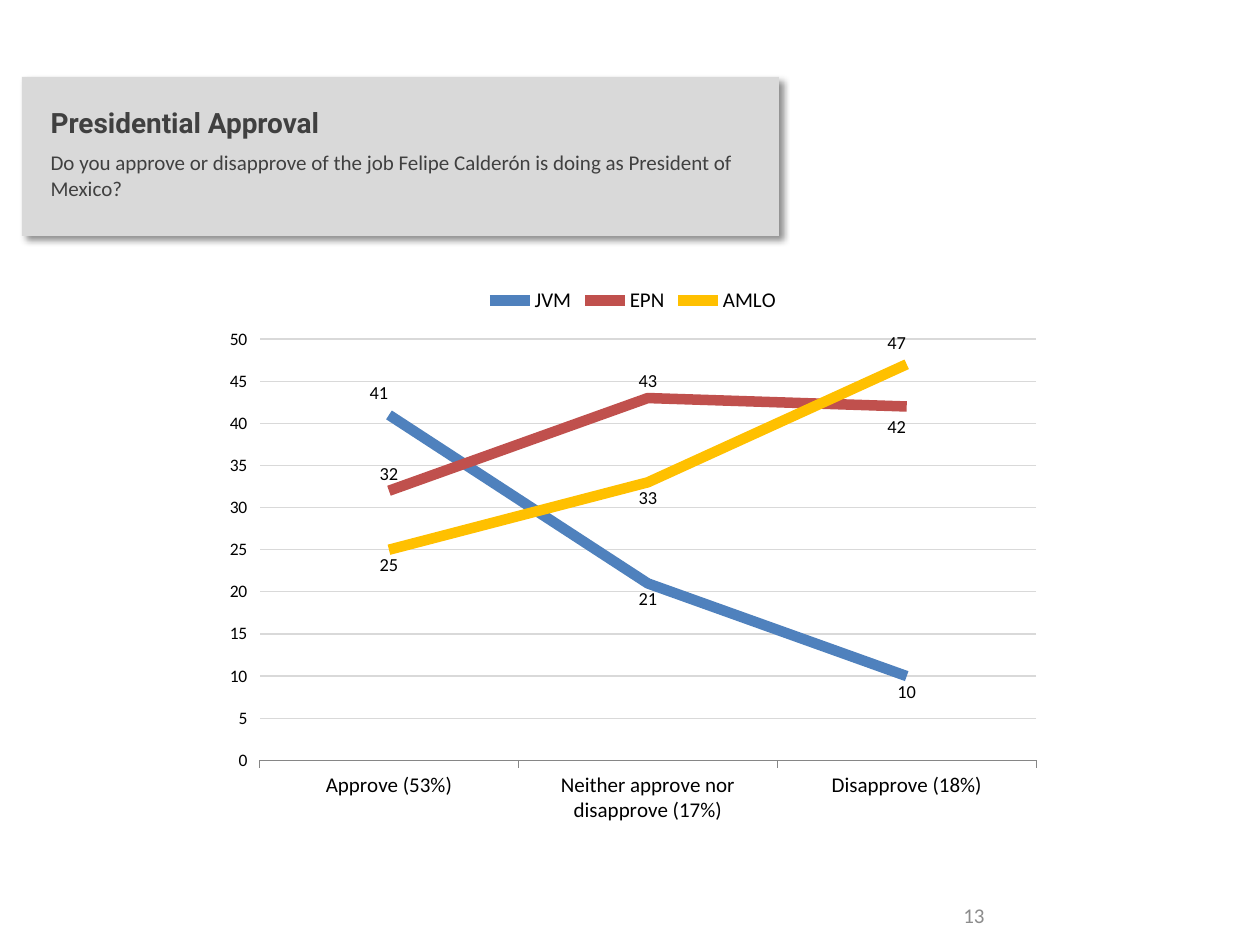
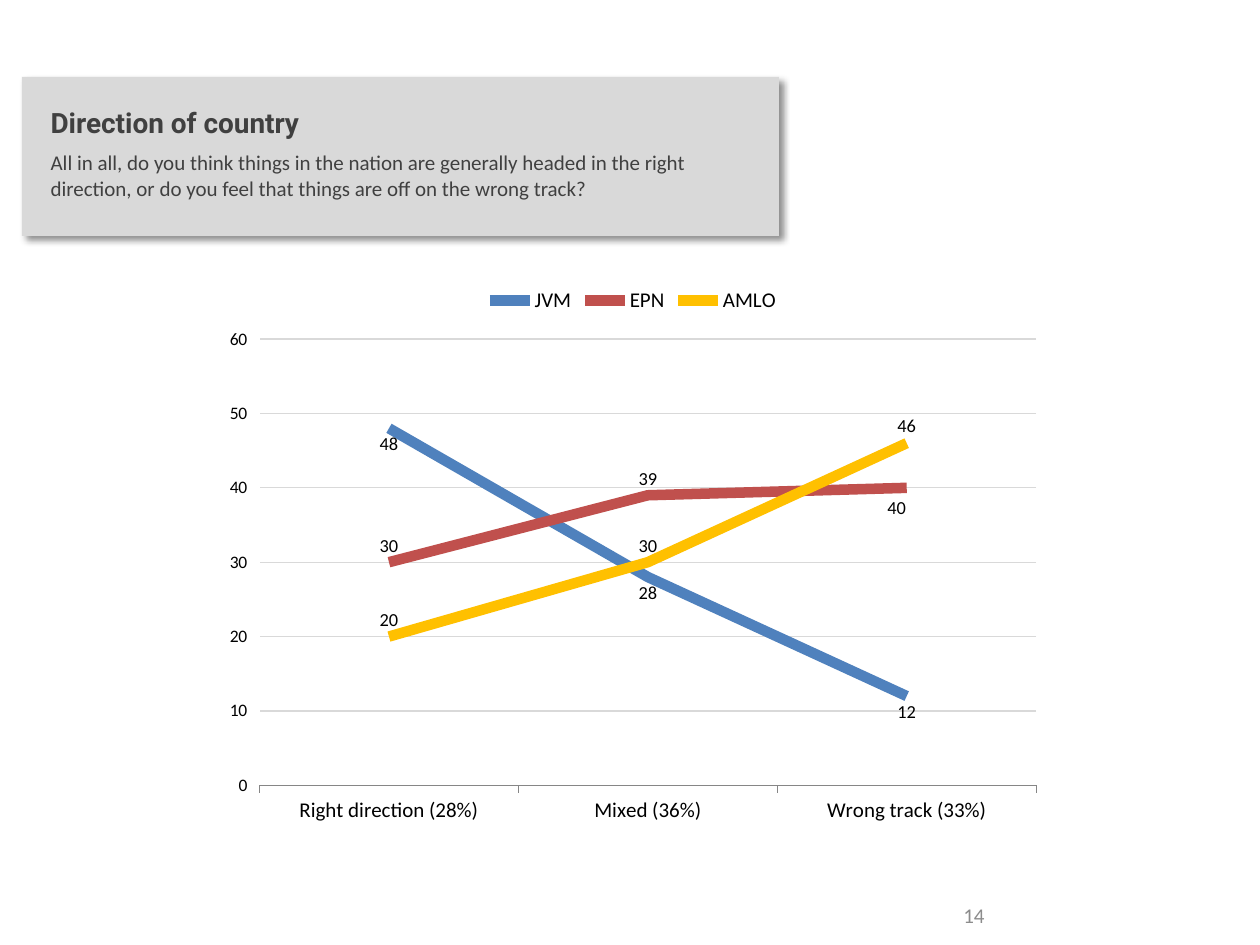
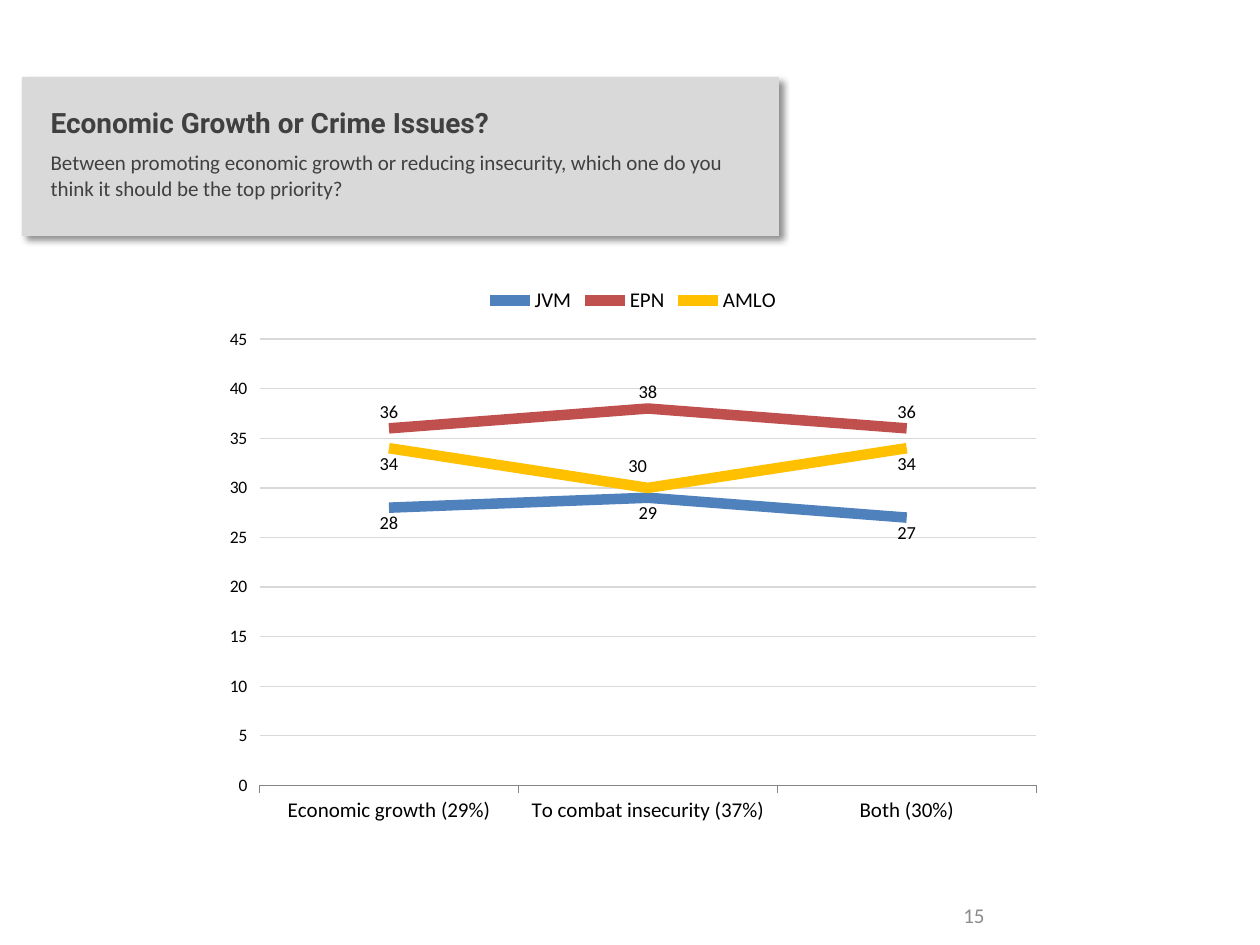
from pptx import Presentation
from pptx.chart.data import CategoryChartData as ChartData
from pptx.dml.color import RGBColor as RGB
from pptx.enum.chart import (XL_CHART_TYPE as Kind, XL_LABEL_POSITION as Spot,
                             XL_LEGEND_POSITION as Side, XL_TICK_MARK as Tick)
from pptx.enum.shapes import MSO_SHAPE as Form
from pptx.enum.text import MSO_ANCHOR as Anchor, MSO_AUTO_SIZE as Fit, PP_ALIGN as Align
from pptx.oxml import parse_xml
from pptx.oxml.ns import nsdecls, qn
from pptx.util import Pt

# Shared look
PX = 914400 / 126
SIZE = (1260, 945)
HEX = {"band": "D9D9D9", "ink": "404040", "page": "8C8C8C", "text": "000000",
       "grid": "D9D9D9", "axis": "868686",
       "JVM": "4F81BD", "EPN": "C0504D", "AMLO": "FFC000"}
BODY, HEAD = "Calibri", "Roboto"
FIRST = 13  # number of the first page

# Boxes: left, top, width, height in px
BAND = (22, 77, 757, 159)
TITLE = (38, 99, 722, 108)
CHART = (213, 274, 840, 560)
PAGE = (926, 890, 96, 50)

# A label that would hit a line flips to the other side and shifts left and outward
ABOVE, BELOW = Spot.ABOVE, Spot.BELOW
FLIP = {ABOVE: BELOW, BELOW: ABOVE}
LEFT, OUT = 10, 5

# Each line: values, label side, points whose label is flipped
POLLS = [
    {"head": "Presidential Approval",
     "ask": "Do you approve or disapprove of the job Felipe Calderón is doing "
            "as President of Mexico?",
     "cats": ["Approve (53%)", "Neither approve nor disapprove (17%)", "Disapprove (18%)"],
     "top": 50, "step": 5,
     "lines": {"JVM": ((41, 21, 10), BELOW, [0]),
               "EPN": ((32, 43, 42), ABOVE, [2]),
               "AMLO": ((25, 33, 47), BELOW, [2])}},
    {"head": "Direction of country",
     "ask": "All in all, do you think things in the nation are generally headed in "
            "the right direction, or do you feel that things are off on the wrong track?",
     "cats": ["Right direction (28%)", "Mixed (36%)", "Wrong track (33%)"],
     "top": 60, "step": 10,
     "lines": {"JVM": ((48, 28, 12), BELOW, []),
               "EPN": ((30, 39, 40), ABOVE, [2]),
               "AMLO": ((20, 30, 46), ABOVE, [])}},
    {"head": "Economic Growth or Crime Issues?",
     "ask": "Between promoting economic growth or reducing insecurity, which one "
            "do you think it should be the top priority?",
     "cats": ["Economic growth (29%)", "To combat insecurity (37%)", "Both (30%)"],
     "top": 45, "step": 5,
     "lines": {"JVM": ((28, 29, 27), BELOW, []),
               "EPN": ((36, 38, 36), ABOVE, []),
               "AMLO": ((34, 30, 34), BELOW, [1])}},
]


# Helpers
def emu(box):
    return [round(n * PX) for n in box]


def tint(name):
    return RGB.from_string(HEX[name])


def style(font, size, color="text", face=BODY, bold=False):
    font.size, font.name, font.bold = Pt(size), face, bold
    font.color.rgb = tint(color)


def whole(labels):
    """Show numbers without decimals."""
    labels.number_format = "0"
    labels.number_format_is_linked = False


# Title band, title and page number
def add_band(slide, box):
    band = slide.shapes.add_shape(Form.RECTANGLE, *emu(box))
    band.fill.solid()
    band.fill.fore_color.rgb = tint("band")
    band.line.fill.background()
    band.shadow.inherit = False
    band.element.spPr.find(qn("a:effectLst")).append(parse_xml(
        f'<a:outerShdw {nsdecls("a")} blurRad="{Pt(4)}" dist="{Pt(3)}" dir="2700000" '
        'algn="tl" rotWithShape="0"><a:srgbClr val="000000"><a:alpha val="43000"/>'
        '</a:srgbClr></a:outerShdw>'))


def add_title(slide, box, head, ask):
    title = slide.shapes.title
    title.left, title.top, title.width, title.height = emu(box)
    frame = title.text_frame
    frame.text = f"{head}\n{ask}"
    frame.word_wrap = True
    frame.auto_size = Fit.SHAPE_TO_FIT_TEXT
    frame.vertical_anchor = Anchor.MIDDLE
    for para in frame.paragraphs:
        para.alignment = Align.LEFT
        para.space_after = Pt(6)
    top, sub = frame.paragraphs
    style(top.runs[0].font, 16, "ink", HEAD, True)
    style(sub.runs[0].font, 12, "ink")


def add_page(slide, box, num):
    frame = slide.shapes.add_textbox(*emu(box)).text_frame
    frame.text = str(num)
    frame.word_wrap = True
    frame.vertical_anchor = Anchor.MIDDLE
    para = frame.paragraphs[0]
    para.alignment = Align.CENTER
    style(para.runs[0].font, 12, "page")


# Chart
def set_legend(chart):
    chart.has_legend = True
    chart.legend.position = Side.TOP
    chart.legend.include_in_layout = False
    style(chart.legend.font, 12)


def set_axes(chart, top, step):
    cat, val = chart.category_axis, chart.value_axis
    for axis, size in ((cat, 12), (val, 10)):
        axis.major_tick_mark = Tick.OUTSIDE
        axis.minor_tick_mark = Tick.NONE
        style(axis.tick_labels.font, size)
    cat.format.line.color.rgb = tint("axis")
    val.format.line.fill.background()
    val.minimum_scale, val.maximum_scale, val.major_unit = 0, top, step
    whole(val.tick_labels)
    grid = val.major_gridlines.format.line
    grid.color.rgb = tint("grid")
    grid.width = Pt(0.75)


def set_line(line, side, flips):
    line.smooth = False
    line.format.line.color.rgb = tint(line.name)
    line.format.line.width = Pt(6)
    labels = line.data_labels
    labels.show_value = True
    labels.position = side
    whole(labels)
    style(labels.font, 10.5)
    for idx in flips:
        label = line.points[idx].data_label
        style(label.font, 10.5)
        label.position = FLIP[side]


def shift_flips(chart, box):
    """Shift each flipped label; only these have a label element of their own."""
    _, _, wide, high = box
    for mark in chart.element.findall(".//" + qn("c:dLbl")):
        above = mark.find(qn("c:dLblPos")).get("val") == "t"
        down = -OUT if above else OUT
        mark.find(qn("c:idx")).addnext(parse_xml(
            f'<c:layout {nsdecls("c")}><c:manualLayout>'
            f'<c:x val="{-LEFT / wide:.3f}"/><c:y val="{down / high:.3f}"/>'
            '</c:manualLayout></c:layout>'))


def add_lines(slide, box, poll):
    data = ChartData(number_format="0")
    data.categories = poll["cats"]
    for name, (vals, _, _) in poll["lines"].items():
        data.add_series(name, vals)
    chart = slide.shapes.add_chart(Kind.LINE, *emu(box), data).chart
    style(chart.font, 18)
    chart.has_title = False
    set_legend(chart)
    set_axes(chart, poll["top"], poll["step"])
    plot = chart.plots[0]
    plot.vary_by_categories = False
    for line in plot.series:
        _, side, flips = poll["lines"][line.name]
        set_line(line, side, flips)
    shift_flips(chart, box)


# Slides
def add_poll(prs, num, poll):
    slide = prs.slides.add_slide(prs.slide_layouts.get_by_name("Title Only"))
    add_band(slide, BAND)
    # Bring the title in front of the band
    title = slide.shapes.title.element
    title.getparent().append(title)
    add_title(slide, TITLE, poll["head"], poll["ask"])
    add_lines(slide, CHART, poll)
    add_page(slide, PAGE, num)


def main():
    prs = Presentation()
    prs.slide_width, prs.slide_height = emu(SIZE)
    for num, poll in enumerate(POLLS, FIRST):
        add_poll(prs, num, poll)
    prs.save("out.pptx")


if __name__ == "__main__":
    main()
